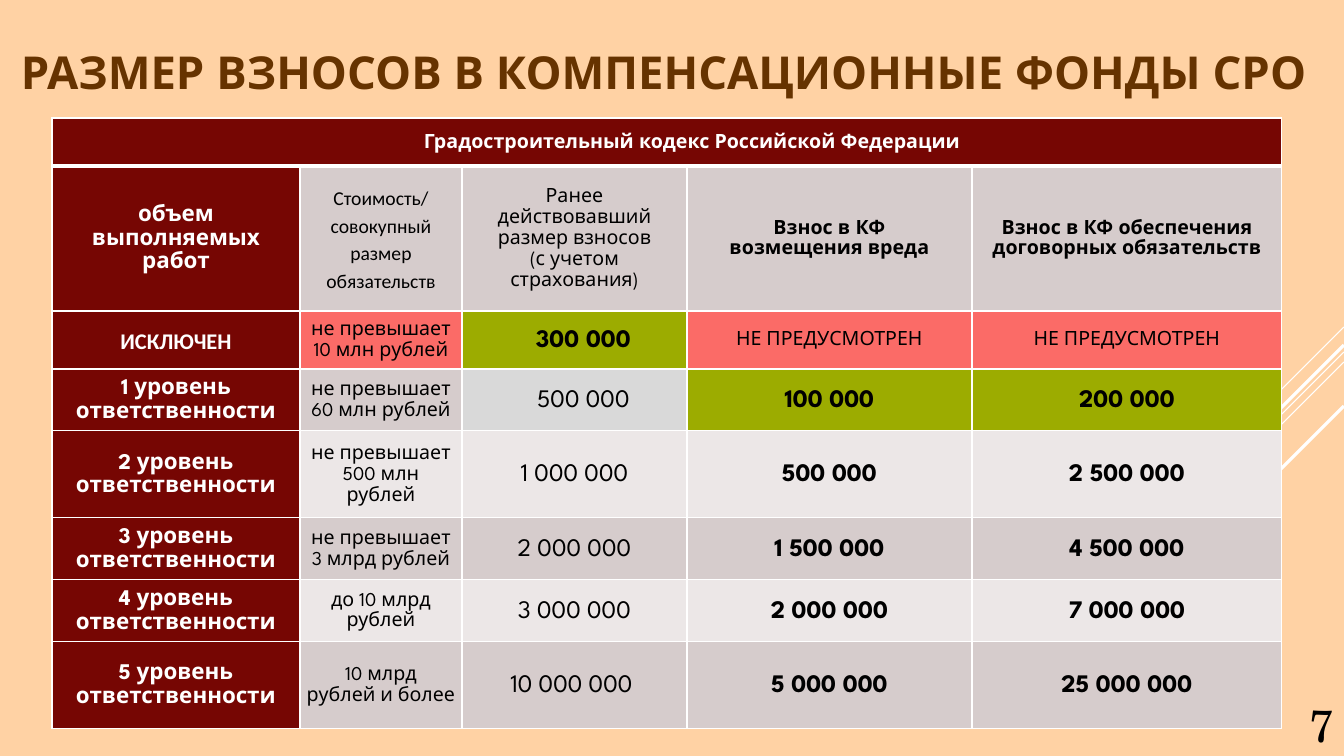
import pptx
import pptx.util
import pptx.dml.color
import pptx.enum.shapes
import pptx.enum.text
import pptx.oxml
import pptx.oxml.ns
from dataclasses import dataclass

TITLE = "РАЗМЕР ВЗНОСОВ В КОМПЕНСАЦИОННЫЕ ФОНДЫ СРО"
PAGE = "7"
LAW = "Градостроительный кодекс Российской Федерации"

# Each cell is a list of paragraphs; \n is a line break inside one.
HEADINGS = [
    ["объем выполняемых работ"],
    ["Стоимость/\nсовокупный размер обязательств"],
    ["Ранее действовавший размер взносов", "(с учетом страхования)"],
    ["Взнос в КФ", "возмещения вреда"],
    ["Взнос в КФ обеспечения", "договорных обязательств"],
]
LEVELS = [
    [["ИСКЛЮЧЕН"], ["не превышает\n10 млн рублей"], ["300 000"],
     ["НЕ ПРЕДУСМОТРЕН"], ["НЕ ПРЕДУСМОТРЕН"]],
    [["1 уровень ответственности"], ["не превышает\n60 млн рублей"],
     ["500 000"], ["100 000"], ["200 000"]],
    [["2 уровень ответственности"], ["не превышает\n500 млн рублей"],
     ["1 000 000"], ["500 000"], ["2 500 000"]],
    [["3 уровень ответственности"], ["не превышает\n3 млрд рублей"],
     ["2 000 000"], ["1 500 000"], ["4 500 000"]],
    [["4 уровень ответственности"], ["до 10 млрд рублей"],
     ["3 000 000"], ["2 000 000"], ["7 000 000"]],
    [["5 уровень ответственности"], ["10 млрд", "рублей и более"],
     ["10 000 000"], ["5 000 000"], ["25 000 000"]],
]

SLIDE_W, SLIDE_H = 1344, 756
TITLE_BOX = (7, 34, 1314, 74)
PAGE_BOX = (1218, 682, 126, 74)
TABLE_LEFT, TABLE_TOP = 52, 118
COLUMNS = [248, 162, 225, 285, 310]
ROWS = [48, 145, 58, 58, 87, 58, 58, 87]
CELL_INSET = 6
LAW_INDENT = 50
OLD_FEE_SHIFT = {0: 9, 1: 9, 5: -3}  # level row: offset from the column centre
RAYS = [(327, 101, 0.75), (352, 329, 0.75), (362, 209, 0.75),
        (345, 193, 2.25), (406, 140, 2.25)]  # top, run, points


@dataclass(frozen=True)
class Theme:
    background: str = "FFD2A4"
    title: str = "663300"
    maroon: str = "760603"
    band_dark: str = "D6CCCC"
    band_light: str = "ECE7E7"
    grey: str = "D9D9D9"
    green: str = "9CAC00"
    red: str = "FB6B67"
    white: str = "FFFFFF"
    black: str = "000000"
    main_font: str = "League Spartan"
    plain_font: str = "Calibri"
    page_font: str = "TeX Gyre Schola"
    title_size: float = 32.4
    page_size: float = 32
    fee_size: float = 18
    level_size: float = 16
    note_size: float = 14
    line_spacing: float = 1.15
    rule: float = 1
    law_rule: float = 3


THEME = Theme()
LEVEL_FILLS = {
    (0, 1): THEME.red, (0, 2): THEME.green, (0, 3): THEME.red, (0, 4): THEME.red,
    (1, 2): THEME.grey, (1, 3): THEME.green, (1, 4): THEME.green,
}
CENTER = pptx.enum.text.PP_ALIGN.CENTER
MIDDLE = pptx.enum.text.MSO_ANCHOR.MIDDLE


def px(length):
    return pptx.util.Emu(round(length * 914400 / 100.8))


def rgb(code):
    return pptx.dml.color.RGBColor.from_string(code)


def write(frame, paragraphs, size, color, bold=False, font=THEME.main_font,
          align=CENTER, spacing=None):
    frame.word_wrap = True
    for number, text in enumerate(paragraphs):
        paragraph = frame.add_paragraph() if number else frame.paragraphs[0]
        paragraph.alignment = align
        if spacing:
            paragraph.line_spacing = spacing
        for part, line in enumerate(text.split("\n")):
            if part:
                paragraph.add_line_break()
            run = paragraph.add_run()
            run.text = line
            run.font.size = pptx.util.Pt(size)
            run.font.name = font
            run.font.bold = bold
            run.font.color.rgb = rgb(color)


def add_text(slide, box, text, anchor, inset, **style):
    frame = slide.shapes.add_textbox(*map(px, box)).text_frame
    frame.vertical_anchor = anchor
    if inset is not None:
        frame.margin_left = frame.margin_right = px(inset)
    write(frame, [text], **style)


def add_ray(slide, top, run, width):
    """Diagonal falling at 45 degrees leftwards from the slide's right edge."""
    ray = slide.shapes.add_connector(
        pptx.enum.shapes.MSO_CONNECTOR.STRAIGHT,
        px(SLIDE_W), px(top), px(SLIDE_W - run), px(top + run))
    ray.line.color.rgb = rgb(THEME.white)
    ray.line.width = pptx.util.Pt(width)
    ray._element.spPr.append(pptx.oxml.parse_xml(
        f'<a:effectLst {pptx.oxml.ns.nsdecls("a")}/>'))


def set_borders(cell, top, bottom):
    sides = {"L": THEME.rule, "R": THEME.rule, "T": top, "B": bottom}
    properties = cell._tc.get_or_add_tcPr()
    for place, (side, width) in enumerate(sides.items()):
        properties.insert(place, pptx.oxml.parse_xml(
            f'<a:ln{side} {pptx.oxml.ns.nsdecls("a")} w="{pptx.util.Pt(width)}">'
            f'<a:solidFill><a:srgbClr val="{THEME.white}"/></a:solidFill>'
            f'</a:ln{side}>'))


def fill_cell(cell, paragraphs, fill, shift=0, top=THEME.rule,
              bottom=THEME.rule, **style):
    cell.fill.solid()
    cell.fill.fore_color.rgb = rgb(fill)
    cell.vertical_anchor = MIDDLE
    cell.margin_left = px(CELL_INSET + max(0, 2 * shift))
    cell.margin_right = px(CELL_INSET + max(0, -2 * shift))
    cell.margin_top = cell.margin_bottom = 0
    set_borders(cell, top, bottom)
    write(cell.text_frame, paragraphs, spacing=THEME.line_spacing, **style)


def heading_style(column):
    if column == 0:
        return dict(size=THEME.level_size, color=THEME.white, bold=True)
    font = THEME.plain_font if column == 1 else THEME.main_font
    return dict(size=THEME.note_size, color=THEME.black, bold=column > 2, font=font)


def level_style(level, column):
    if column == 0:
        font = THEME.main_font if level else THEME.plain_font
        return dict(size=THEME.level_size, color=THEME.white, bold=True, font=font)
    is_note = column == 1 or (level == 0 and column > 2)
    return dict(size=THEME.note_size if is_note else THEME.fee_size,
                color=THEME.black,
                bold=not is_note and (column > 2 or level == 0))


def add_fee_table(slide):
    fees = slide.shapes.add_table(
        len(ROWS), len(COLUMNS), px(TABLE_LEFT), px(TABLE_TOP),
        px(sum(COLUMNS)), px(sum(ROWS))).table
    for column, width in zip(fees.columns, COLUMNS):
        column.width = px(width)
    for row, height in zip(fees.rows, ROWS):
        row.height = px(height)

    law = fees.cell(0, 0)
    law.merge(fees.cell(0, len(COLUMNS) - 1))
    fill_cell(law, [LAW], THEME.maroon, shift=LAW_INDENT / 2,
              bottom=THEME.law_rule, size=THEME.note_size,
              color=THEME.white, bold=True)
    for column, heading in enumerate(HEADINGS):
        fill_cell(fees.cell(1, column), heading,
                  THEME.band_dark if column else THEME.maroon,
                  top=THEME.law_rule, **heading_style(column))
    for level, entries in enumerate(LEVELS):
        band = THEME.band_dark if level % 2 else THEME.band_light
        for column, entry in enumerate(entries):
            fill = LEVEL_FILLS.get((level, column), band) if column else THEME.maroon
            shift = OLD_FEE_SHIFT.get(level, 0) if column == 2 else 0
            fill_cell(fees.cell(level + 2, column), entry, fill, shift,
                      **level_style(level, column))


def main():
    deck = pptx.Presentation()
    deck.slide_width, deck.slide_height = px(SLIDE_W), px(SLIDE_H)
    slide = deck.slides.add_slide(deck.slide_layouts[6])
    slide.background.fill.solid()
    slide.background.fill.fore_color.rgb = rgb(THEME.background)
    for ray in RAYS:
        add_ray(slide, *ray)
    add_text(slide, TITLE_BOX, TITLE, MIDDLE, 0, size=THEME.title_size,
             color=THEME.title, bold=True)
    add_text(slide, PAGE_BOX, PAGE, pptx.enum.text.MSO_ANCHOR.BOTTOM, None,
             size=THEME.page_size, color=THEME.black, font=THEME.page_font,
             align=pptx.enum.text.PP_ALIGN.RIGHT)
    add_fee_table(slide)
    deck.save("out.pptx")


if __name__ == "__main__":
    main()
